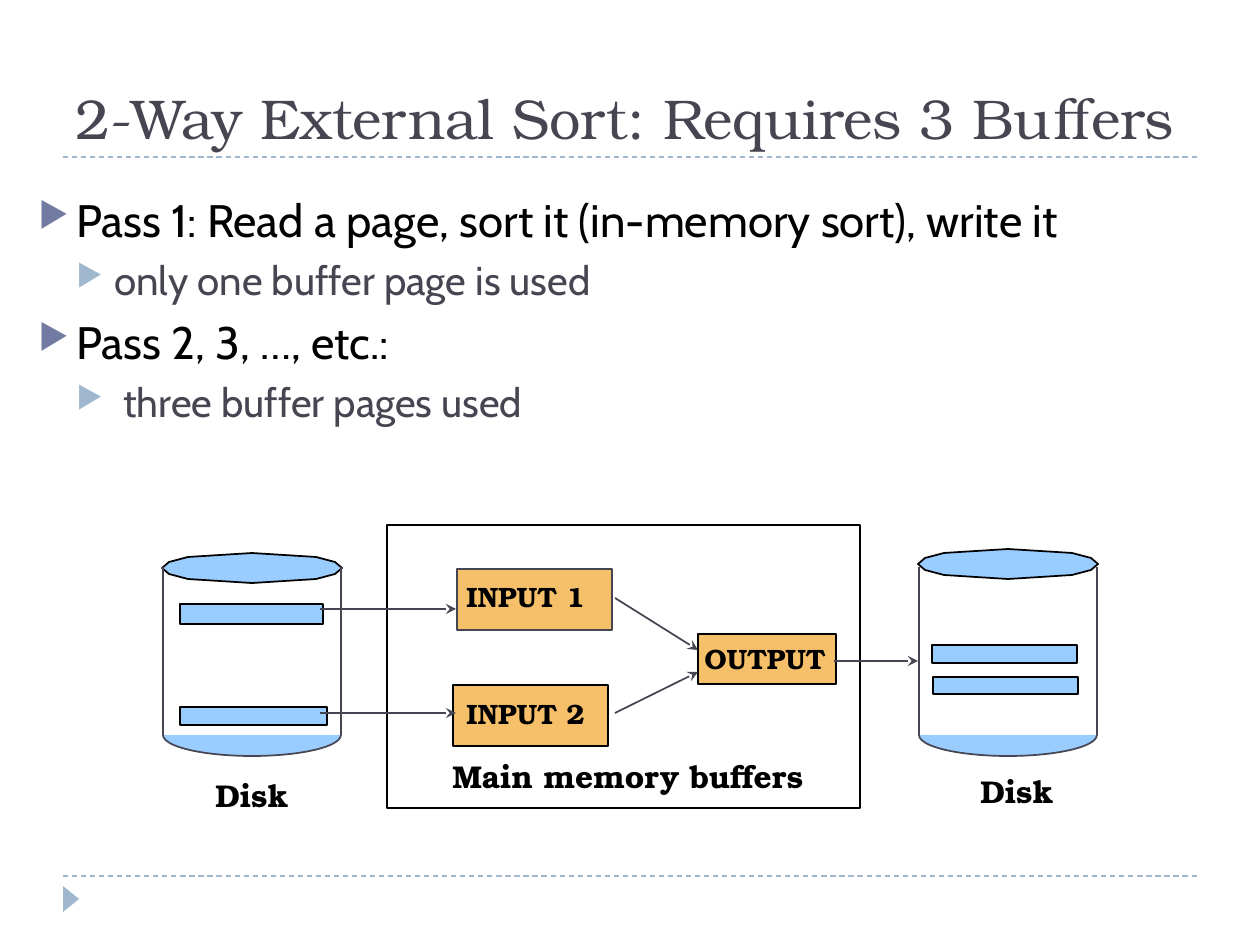
from lxml.etree import SubElement
from pptx import Presentation
from pptx.dml.color import RGBColor
from pptx.enum.dml import MSO_LINE
from pptx.enum.shapes import MSO_CONNECTOR as Link, MSO_SHAPE as Shape
from pptx.enum.text import MSO_ANCHOR as Anchor
from pptx.oxml.ns import qn
from pptx.util import Emu, Pt

COLORS = {
    "ink": "000000", "slate": "464653", "pale": "9FB8CD",
    "indigo": "727CA3", "sky": "99CCFF", "amber": "F6BF69",
}
SERIF, SANS = "TeX Gyre Bonum", "Cabin"
EMU_PER_PX = 914400 / 126

TITLE = "2-Way External Sort: Requires 3 Buffers"
PASSES = [
    (0, "Pass 1: Read a page, sort it (in-memory sort), write it"),
    (1, "only one buffer page is used"),
    (0, "Pass 2, 3, …, etc.:"),
    (1, " three buffer pages used"),
]
LEVELS = [
    {"size": 26, "color": "ink", "before": 6, "bullet": "indigo", "percent": 76},
    {"size": 23, "color": "slate", "before": 5, "bullet": "pale", "percent": 75},
]
RULES = [157, 876]
PAGES = [
    (180, 604, 143, 20), (180, 707, 147, 18),
    (932, 645, 145, 18), (933, 677, 145, 17),
]
BUFFERS = [
    ((457, 569, 155, 61), "slate"),
    ((698, 634, 138, 50), "ink"),
    ((453, 685, 155, 61), "ink"),
]
MEMORY = (387, 525, 473, 283)
LABELS = [
    ("Main memory buffers", (440, 751, 377, 50), 18),
    ("INPUT 1", (454, 573, 144, 46), 16),
    ("INPUT 2", (454, 690, 144, 46), 16),
    ("OUTPUT", (692, 635, 146, 46), 16),
    ("Disk", (968, 766, 98, 50), 18),
    ("Disk", (203, 770, 98, 50), 18),
]
DISKS = [(252, 568), (1008, 564)]
DISK_RADIUS, DISK_TOP, DISK_BOTTOM, DISK_DEPTH = 89, 567, 735, 21
LID_QUARTER = [(90, 0), (83, 6), (64, 11), (0, 15)]
ARROWS = [
    (320, 609, 456, 609), (320, 713, 456, 713),
    (615, 598, 698, 650), (615, 713, 698, 672),
    (834, 661, 918, 661),
]


def px(value):
    return Emu(round(value * EMU_PER_PX))


def rgb(name):
    return RGBColor.from_string(COLORS[name])


def paint(part, fill=None, line=None):
    part.shadow.inherit = False
    if fill:
        part.fill.solid()
        part.fill.fore_color.rgb = rgb(fill)
    else:
        part.fill.background()
    if line:
        part.line.color.rgb = rgb(line)
        part.line.width = Pt(1)
    else:
        part.line.fill.background()
    return part


def add_preset(slide, preset, box, fill=None, line=None):
    return paint(slide.shapes.add_shape(preset, *map(px, box)), fill, line)


def add_line(slide, ends, color="slate", width=1, dash=False, arrow=False):
    link = slide.shapes.add_connector(Link.STRAIGHT, *map(px, ends))
    link.line.color.rgb = rgb(color)
    link.line.width = Pt(width)
    if dash:
        link.line.dash_style = MSO_LINE.DASH
    if arrow:
        SubElement(link.line._get_or_add_ln(), qn("a:tailEnd"), type="stealth")
    SubElement(link._element.spPr, qn("a:effectLst"))


def write(paragraph, text, size=16, color="ink", font=SERIF, bold=False, before=0):
    paragraph.space_before = Pt(before)
    run = paragraph.add_run()
    run.text = text
    run.font.size = Pt(size)
    run.font.name = font
    run.font.bold = bold
    run.font.color.rgb = rgb(color)


def add_frame(slide, box, wrap=True, anchor=Anchor.TOP):
    frame = slide.shapes.add_textbox(*map(px, box)).text_frame
    frame.word_wrap = wrap
    frame.vertical_anchor = anchor
    return frame


def add_bullet(paragraph, level, color, percent):
    paragraph.level = level
    props = paragraph._p.get_or_add_pPr()
    props.set("marL", str(px(38 * (level + 1))))
    props.set("indent", str(-px(38)))
    tint = SubElement(props, qn("a:buClr"))
    SubElement(tint, qn("a:srgbClr"), val=COLORS[color])
    SubElement(props, qn("a:buSzPct"), val=str(percent * 1000))
    SubElement(props, qn("a:buChar"), char="▶")


def add_passes(slide):
    frame = add_frame(slide, (26, 186, 1207, 651))
    for index, (level, text) in enumerate(PASSES):
        paragraph = frame.add_paragraph() if index else frame.paragraphs[0]
        style = LEVELS[level]
        write(paragraph, text, size=style["size"], color=style["color"],
              font=SANS, before=style["before"])
        add_bullet(paragraph, level, style["bullet"], style["percent"])


def add_disk(slide, center, lid_y):
    left, right = center - DISK_RADIUS, center + DISK_RADIUS
    upper = [(x, -y) for x, y in LID_QUARTER]
    upper += [(-x, y) for x, y in reversed(upper[:-1])]
    lower = [(-x, -y) for x, y in upper[1:-1]]
    rim = [(px(center + x), px(lid_y + y)) for x, y in upper + lower]
    lid = slide.shapes.build_freeform(*rim[0], scale=1.0)
    lid.add_line_segments(rim[1:], close=True)
    paint(lid.convert_to_shape(), "sky", "ink")
    for side in (left, right):
        add_line(slide, (side, DISK_TOP, side, DISK_BOTTOM))
    base = add_preset(slide, Shape.ARC,
                      (left, DISK_BOTTOM - DISK_DEPTH, 2 * DISK_RADIUS, 2 * DISK_DEPTH),
                      "sky", "slate")
    base.adjustments[0] = 0
    base.adjustments[1] = 108


def main():
    deck = Presentation()
    deck.slide_width, deck.slide_height = px(1260), px(945)
    slide = deck.slides.add_slide(deck.slide_layouts[6])

    for y in RULES:
        add_line(slide, (63, y, 1197, y), color="pale", width=0.75, dash=True)
    marker = add_preset(slide, Shape.ISOSCELES_TRIANGLE, (58, 891, 26, 16), "pale")
    marker.rotation = 90

    heading = add_frame(slide, (63, 21, 1134, 136), anchor=Anchor.BOTTOM)
    write(heading.paragraphs[0], TITLE, size=32, color="slate")
    add_passes(slide)

    for center, lid_y in DISKS:
        add_disk(slide, center, lid_y)
    for box in PAGES:
        add_preset(slide, Shape.RECTANGLE, box, "sky", "ink")
    for box, outline in BUFFERS:
        add_preset(slide, Shape.RECTANGLE, box, "amber", outline)
    add_preset(slide, Shape.RECTANGLE, MEMORY, line="ink")
    for text, box, size in LABELS:
        label = add_frame(slide, box, wrap=False)
        write(label.paragraphs[0], text, size=size, bold=True)
    for ends in ARROWS:
        add_line(slide, ends, arrow=True)

    deck.save("out.pptx")


if __name__ == "__main__":
    main()
